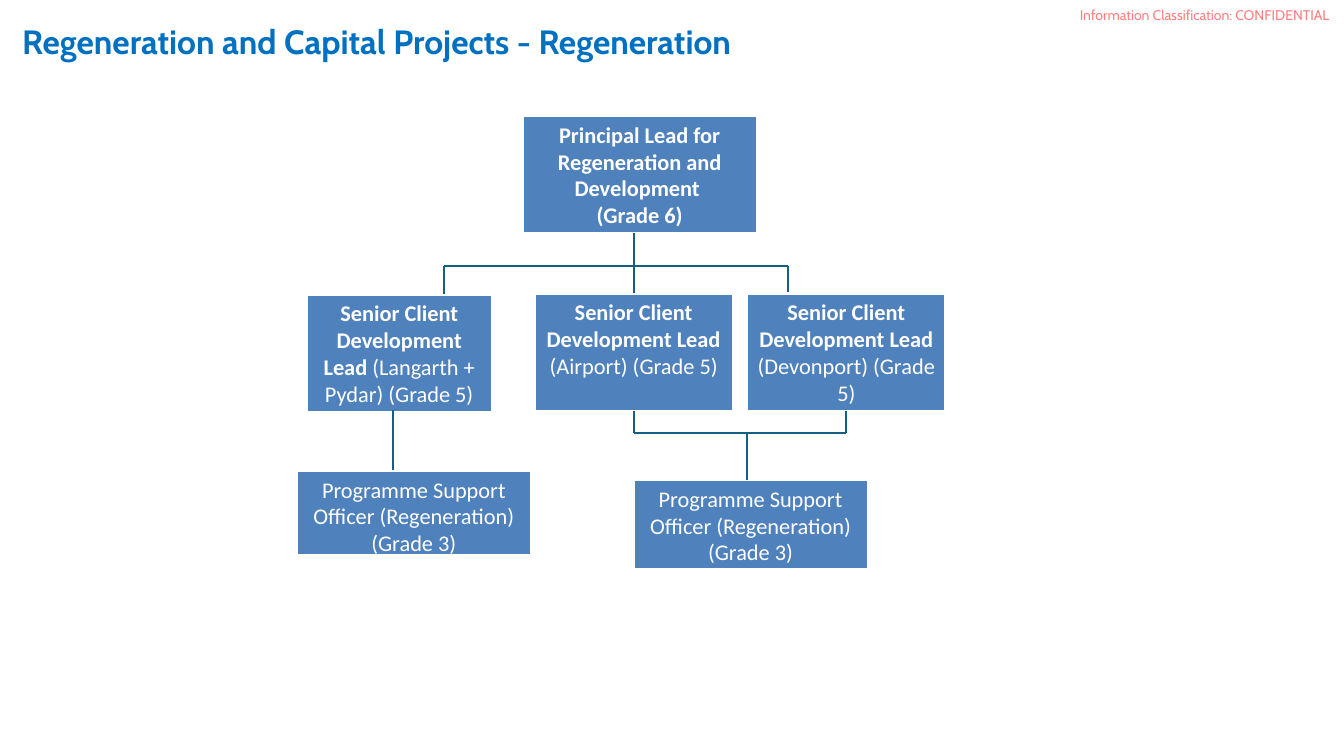
from lxml import etree
from pptx import Presentation
from pptx.dml.color import RGBColor
from pptx.enum.shapes import MSO_CONNECTOR, MSO_SHAPE
from pptx.enum.text import MSO_ANCHOR, PP_ALIGN
from pptx.oxml.ns import qn
from pptx.util import Inches, Pt

RECT, STRAIGHT = MSO_SHAPE.RECTANGLE, MSO_CONNECTOR.STRAIGHT
TOP, MIDDLE = MSO_ANCHOR.TOP, MSO_ANCHOR.MIDDLE
LEFT, CENTER = PP_ALIGN.LEFT, PP_ALIGN.CENTER
SIDE_TOP, SIDE_BOTTOM = 0, 2
BLUE, WHITE, TEAL = "4F81BD", "FFFFFF", "156082"


def rgb(value):
    return RGBColor.from_string(value)


def write(sp, paragraphs, font="Calibri", size=16, color=WHITE, align=CENTER, anchor=TOP):
    """Fill sp with paragraphs, each a list of (text, bold) runs."""
    tf = sp.text_frame
    tf.word_wrap = True
    tf.vertical_anchor = anchor
    for i, runs in enumerate(paragraphs):
        p = tf.add_paragraph() if i else tf.paragraphs[0]
        p.alignment = align
        for text, bold in runs:
            r = p.add_run()
            r.text = text
            r.font.name, r.font.size, r.font.bold = font, Pt(size), bold
            r.font.color.rgb = rgb(color)
    return tf


prs = Presentation()
prs.slide_width, prs.slide_height = Inches(13.33), Inches(7.5)
s = prs.slides.add_slide(prs.slide_layouts[5])

title = s.shapes.title
title.left, title.top, title.width, title.height = map(Inches, (0.12, 0.16, 10, 0.5))
write(title, [[("Regeneration and Capital Projects - Regeneration", True)]],
      font="Cabin", size=24, color="0070C0", align=LEFT, anchor=MIDDLE)

# Classification mark, half transparent
mark = s.shapes.add_textbox(*map(Inches, (10.71, 0.06, 2.61, 0.17)))
tf = write(mark, [[("Information Classification: CONFIDENTIAL", False)]],
           font="Cabin", size=10, color="FF0000", align=LEFT)
tf.margin_left = tf.margin_top = tf.margin_right = tf.margin_bottom = 0
tf.word_wrap = False
red = next(mark.element.iter(qn("a:srgbClr")))
etree.SubElement(red, qn("a:alpha")).set("val", "50000")

# Posts: left, top, width, height, paragraphs
senior = ("Senior Client Development Lead", True)
support = [[("Programme Support Officer (Regeneration) (Grade 3)", False)]]
posts = {
    "Principal": (5.18, 1.15, 2.33, 1.17,
                  [[("Principal Lead for Regeneration and Development ", True)],
                   [("(Grade 6)", True)]]),
    "Langarth": (3.04, 2.92, 1.84, 1.17,
                 [[senior, (" (Langarth + Pydar) (Grade 5)", False)]]),
    "Airport": (5.3, 2.91, 1.97, 1.17, [[senior, (" (Airport) (Grade 5)", False)]]),
    "Devonport": (7.41, 2.91, 1.97, 1.17, [[senior, (" (Devonport) (Grade 5)", False)]]),
    "Support left": (2.94, 4.67, 2.33, 0.84, support),
    "Support right": (6.28, 4.76, 2.33, 0.89, support),
}
boxes = {}
for post, (*place, paragraphs) in posts.items():
    sp = s.shapes.add_shape(RECT, *map(Inches, place))
    sp.shadow.inherit = False
    sp.fill.solid()
    sp.fill.fore_color.rgb = rgb(BLUE)
    sp.line.color.rgb = rgb(WHITE)
    sp.line.width = Pt(2)
    write(sp, paragraphs)
    boxes[post] = sp

# Lines: x1, y1, x2, y2, box and side joined at the end
upper, lower = 2.64, 4.3
airport_x, devonport_x = (posts[post][0] + posts[post][2] / 2
                          for post in ("Airport", "Devonport"))
lines = [
    (4.4, upper, 7.82, upper, None, None),
    (4.4, upper, 4.4, 2.92, None, None),
    (7.82, upper, 7.82, 2.9, None, None),
    (airport_x, 2.31, airport_x, 2.91, "Airport", SIDE_TOP),
    (3.9, 4.07, 3.9, 4.66, None, None),
    (airport_x, lower, devonport_x, lower, None, None),
    (airport_x, lower, airport_x, 4.08, "Airport", SIDE_BOTTOM),
    (devonport_x, lower, devonport_x, 4.08, "Devonport", SIDE_BOTTOM),
    (7.41, lower, 7.41, 4.76, None, None),
]
for *ends, post, side in lines:
    line = s.shapes.add_connector(STRAIGHT, *map(Inches, ends))
    if post:
        line.end_connect(boxes[post], side)
    line.line.color.rgb = rgb(TEAL)
    line.line.width = Pt(1.5)
    etree.SubElement(line.element.spPr, qn("a:effectLst"))

prs.save("out.pptx")
